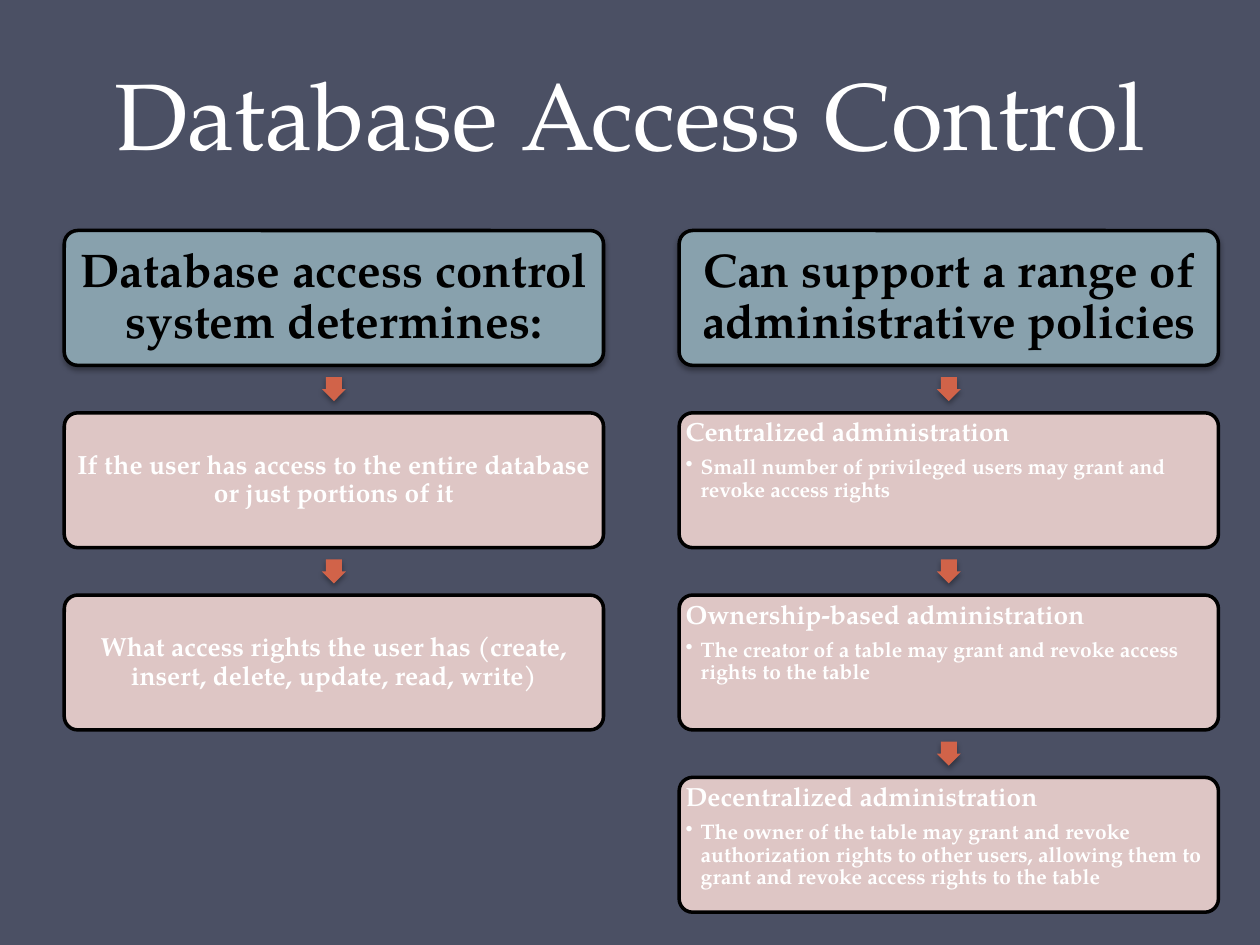
from dataclasses import dataclass

import pptx
import pptx.dml.color
import pptx.enum.shapes
import pptx.enum.text
import pptx.oxml
import pptx.oxml.ns
import pptx.util
from pptx.util import Inches

FONT = "TeX Gyre Pagella"
WHITE, BLACK = "FFFFFF", "000000"
BACKDROP, HEADING_FILL, ITEM_FILL, ARROW_FILL = "4B5064", "88A1AD", "EED3D0", "D16349"
BOX_WIDTH, BOX_HEIGHT, ARROW_SIZE = 4.28, 1.07, 0.19
FIRST_TOP, LAST_TOP = 1.83, 6.17
PITCH = (LAST_TOP - FIRST_TOP) / 3
ALIGN = pptx.enum.text.PP_ALIGN
ANCHOR = pptx.enum.text.MSO_ANCHOR
SHAPE = pptx.enum.shapes.MSO_SHAPE


@dataclass
class Item:
    text: str
    detail: str = ""


@dataclass
class Column:
    left: float
    heading: str
    items: list[Item]


COLUMNS = [
    Column(0.51, "Database access control system determines:", [
        Item("If the user has access to the entire database or just portions of it"),
        Item("What access rights the user has (create, insert, delete, update, read, write)"),
    ]),
    Column(5.39, "Can support a range of administrative policies", [
        Item("Centralized administration",
             "Small number of privileged users may grant and revoke access rights"),
        Item("Ownership-based administration",
             "The creator of a table may grant and revoke access rights to the table"),
        Item("Decentralized administration",
             "The owner of the table may grant and revoke authorization rights to other users, "
             "allowing them to grant and revoke access rights to the table"),
    ]),
]


def paint(color_format, color: str) -> None:
    color_format.rgb = pptx.dml.color.RGBColor.from_string(color)


def fill_shape(shape, color: str, opacity: int = 100) -> None:
    shape.fill.solid()
    paint(shape.fill.fore_color, color)
    if opacity < 100:
        tint = shape.fill._xPr.find(".//" + pptx.oxml.ns.qn("a:srgbClr"))
        alpha = pptx.oxml.parse_xml(f'<a:alpha {pptx.oxml.ns.nsdecls("a")} val="{opacity * 1000}"/>')
        tint.append(alpha)


def cast_shadow(shape) -> None:
    effects = shape._element.spPr.find(pptx.oxml.ns.qn("a:effectLst"))
    effects.append(pptx.oxml.parse_xml(
        f'<a:outerShdw {pptx.oxml.ns.nsdecls("a")} blurRad="{pptx.util.Pt(3.1)}" '
        f'dist="{pptx.util.Pt(1.8)}" dir="5400000" rotWithShape="0">'
        f'<a:srgbClr val="{BLACK}"><a:alpha val="35000"/></a:srgbClr></a:outerShdw>'))


def add_bullet(paragraph) -> None:
    paragraph.level = 1
    properties = paragraph._p.get_or_add_pPr()
    properties.set("marL", str(Inches(0.12)))
    properties.set("indent", str(-Inches(0.12)))
    properties.append(pptx.oxml.parse_xml(f'<a:buChar {pptx.oxml.ns.nsdecls("a")} char="•"/>'))


def write(paragraph, text: str, *, size: float, color: str = WHITE, bold: bool = True,
          align=ALIGN.LEFT, spacing=0.9, after: float = 0, bullet: bool = False) -> None:
    if bullet:
        add_bullet(paragraph)
    paragraph.alignment = align
    paragraph.line_spacing = spacing
    paragraph.space_after = pptx.util.Pt(after)
    run = paragraph.add_run()
    run.text = text
    run.font.name = FONT
    run.font.size = pptx.util.Pt(size)
    run.font.bold = bold
    paint(run.font.color, color)


def set_frame(frame, anchor, inset: float) -> None:
    frame.word_wrap = True
    frame.vertical_anchor = anchor
    frame.margin_left = frame.margin_right = Inches(inset)
    frame.margin_top = frame.margin_bottom = Inches(inset)


def add_box(slide, left: float, top: float, color: str, opacity: int = 100):
    box = slide.shapes.add_shape(SHAPE.ROUNDED_RECTANGLE, Inches(left), Inches(top),
                                 Inches(BOX_WIDTH), Inches(BOX_HEIGHT))
    box.adjustments[0] = 0.1
    box.shadow.inherit = False
    fill_shape(box, color, opacity)
    paint(box.line.color if box.line.fill.solid() is None else box.line.color, BLACK)
    box.line.width = pptx.util.Pt(2)
    return box


def add_heading(slide, column: Column) -> None:
    box = add_box(slide, column.left, FIRST_TOP, HEADING_FILL)
    cast_shadow(box)
    set_frame(box.text_frame, ANCHOR.MIDDLE, 0.04)
    write(box.text_frame.paragraphs[0], column.heading, size=27, color=BLACK,
          align=ALIGN.CENTER, after=9.45)


def add_arrow(slide, left: float, box_top: float) -> None:
    gap = PITCH - BOX_HEIGHT
    arrow = slide.shapes.add_shape(
        SHAPE.RIGHT_ARROW, Inches(left + (BOX_WIDTH - ARROW_SIZE) / 2),
        Inches(box_top - (gap + ARROW_SIZE) / 2), Inches(ARROW_SIZE), Inches(ARROW_SIZE))
    arrow.rotation = 90
    arrow.adjustments[0] = 0.67
    arrow.adjustments[1] = 0.5
    arrow.shadow.inherit = False
    cast_shadow(arrow)
    fill_shape(arrow, ARROW_FILL)
    arrow.line.fill.background()


def add_item(slide, left: float, top: float, item: Item) -> None:
    frame = add_box(slide, left, top, ITEM_FILL, opacity=90).text_frame
    set_frame(frame, ANCHOR.TOP if item.detail else ANCHOR.MIDDLE, 0.02)
    write(frame.paragraphs[0], item.text, size=15, after=5.25,
          align=ALIGN.LEFT if item.detail else ALIGN.CENTER)
    if item.detail:
        write(frame.add_paragraph(), item.detail, size=12, after=1.8, bullet=True)


def add_title(slide, text: str) -> None:
    title = slide.shapes.add_textbox(Inches(0.5), Inches(0), Inches(9), Inches(1.39))
    set_frame(title.text_frame, ANCHOR.BOTTOM, 0.05)
    write(title.text_frame.paragraphs[0], text, size=54, bold=False,
          align=ALIGN.CENTER, spacing=pptx.util.Pt(58))


def main() -> None:
    deck = pptx.Presentation()
    deck.slide_width, deck.slide_height = Inches(10), Inches(7.5)
    slide = deck.slides.add_slide(deck.slide_layouts[6])
    fill_shape(slide.background, BACKDROP)
    add_title(slide, "Database Access Control")
    for column in COLUMNS:
        add_heading(slide, column)
        for row, item in enumerate(column.items, start=1):
            top = FIRST_TOP + row * PITCH
            add_arrow(slide, column.left, top)
            add_item(slide, column.left, top, item)
    deck.save("out.pptx")


if __name__ == "__main__":
    main()
